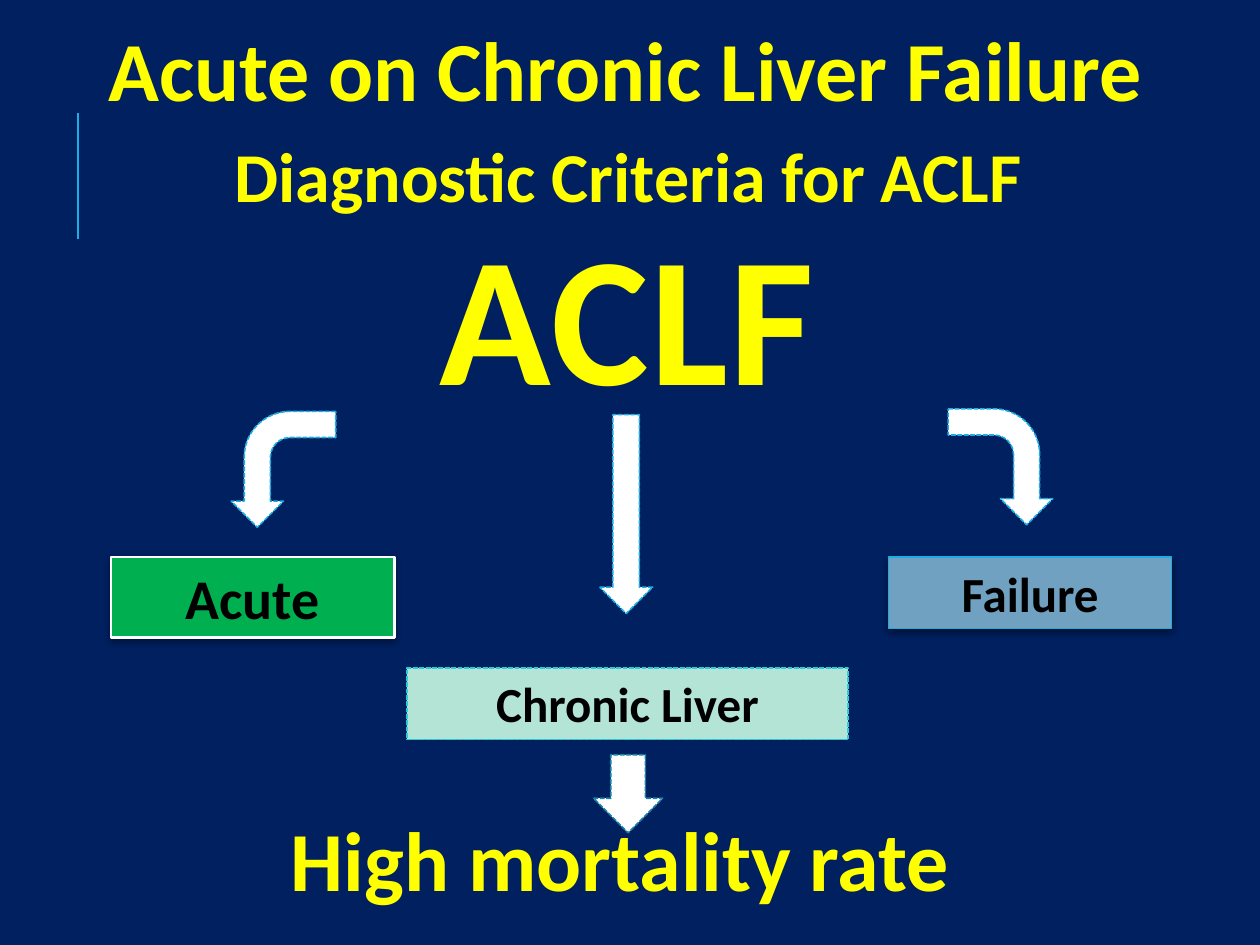
from dataclasses import dataclass
from typing import Optional

from lxml.etree import SubElement
from pptx import Presentation
from pptx.dml.color import RGBColor
from pptx.enum.dml import MSO_LINE
from pptx.enum.shapes import MSO_CONNECTOR, MSO_SHAPE
from pptx.enum.text import MSO_ANCHOR, MSO_AUTO_SIZE, PP_ALIGN
from pptx.oxml.ns import qn
from pptx.util import Inches, Pt

NAVY = RGBColor(0x00, 0x20, 0x60)
YELLOW = RGBColor(0xFF, 0xFF, 0x00)
WHITE = RGBColor(0xFF, 0xFF, 0xFF)
BLACK = RGBColor(0x00, 0x00, 0x00)
GREEN = RGBColor(0x00, 0xB0, 0x50)
STEEL = RGBColor(0x70, 0xA1, 0xC0)
MINT = RGBColor(0xB3, 0xE4, 0xD6)
SKY = RGBColor(0x1C, 0xAD, 0xE4)
TEAL = RGBColor(0x27, 0xCE, 0xD7)
DEEP_SKY = RGBColor(0x15, 0x80, 0xA9)

WIDTH, HEIGHT = Inches(10), Inches(7.5)
COLUMNS, ROWS = 100, 75


@dataclass(frozen=True)
class Area:
    column: float
    row: float
    columns: float
    rows: float

    def frame(self) -> dict:
        return {
            "left": int(WIDTH * self.column / COLUMNS),
            "top": int(HEIGHT * self.row / ROWS),
            "width": int(WIDTH * self.columns / COLUMNS),
            "height": int(HEIGHT * self.rows / ROWS),
        }


@dataclass(frozen=True)
class Heading:
    words: str
    area: Area
    size: float
    align: PP_ALIGN = PP_ALIGN.CENTER
    anchor: MSO_ANCHOR = MSO_ANCHOR.TOP


@dataclass(frozen=True)
class Component:
    words: str
    area: Area
    size: float
    fill: RGBColor
    edge: RGBColor
    edge_width: float
    dash: Optional[MSO_LINE] = None
    shadow_percent: int = 0


@dataclass(frozen=True)
class Arrow:
    preset: MSO_SHAPE
    area: Area
    edge: RGBColor = SKY
    rotation: float = 0
    flipped: bool = False


HEADINGS = [
    Heading("Acute on Chronic Liver Failure", Area(4.3, 2.5, 90.7, 5.8), 48,
            anchor=MSO_ANCHOR.MIDDLE),
    Heading("Diagnostic Criteria for ACLF", Area(6.7, 10, 86.3, 8), 40),
    Heading("High mortality rate", Area(22.1, 63.6, 70.9, 9), 48, PP_ALIGN.LEFT),
]
COMPONENTS = [
    Component("Acute", Area(8.8, 44.2, 22.5, 6.4), 32, GREEN, WHITE, 1.57,
              shadow_percent=35),
    Component("Failure", Area(70.5, 44.2, 22.5, 5.7), 28, STEEL, SKY, 0.75,
              shadow_percent=45),
    Component("Chronic Liver", Area(32.3, 53, 35, 5.7), 28, MINT, TEAL, 0.9,
              MSO_LINE.SQUARE_DOT),
]
ARROWS = [
    Arrow(MSO_SHAPE.BENT_ARROW, Area(17.9, 33.1, 9.2, 8.3), rotation=270, flipped=True),
    Arrow(MSO_SHAPE.BENT_ARROW, Area(74.8, 32.9, 9.2, 8.3), rotation=90),
    Arrow(MSO_SHAPE.DOWN_ARROW, Area(47.6, 32.9, 4.2, 15.8)),
    Arrow(MSO_SHAPE.DOWN_ARROW, Area(47.1, 59.9, 5.5, 6.2), DEEP_SKY),
]


def set_all(target, values: dict) -> None:
    for attribute, value in values.items():
        setattr(target, attribute, value)


def write(shape, words: str, size: float, color: RGBColor,
          align: PP_ALIGN = PP_ALIGN.CENTER, anchor: MSO_ANCHOR = MSO_ANCHOR.TOP):
    set_all(shape.text_frame, {"word_wrap": True, "auto_size": MSO_AUTO_SIZE.NONE,
                               "vertical_anchor": anchor})
    paragraph = shape.text_frame.paragraphs[0]
    paragraph.alignment = align
    run = paragraph.add_run()
    run.text = words
    set_all(run.font, {"name": "Calibri", "size": Pt(size), "bold": True})
    run.font.color.rgb = color
    return paragraph


def paint(shape, fill: RGBColor, edge: RGBColor, width: float,
          dash: Optional[MSO_LINE]) -> None:
    shape.shadow.inherit = False
    shape.fill.solid()
    shape.fill.fore_color.rgb = fill
    shape.line.color.rgb = edge
    set_all(shape.line, {"width": Pt(width), "dash_style": dash})


def cast_shadow(shape, percent: int) -> None:
    effects = shape.element.spPr.find(qn("a:effectLst"))
    shadow = SubElement(effects, qn("a:outerShdw"), blurRad=str(Pt(4)),
                        dist=str(Pt(2)), dir="5400000", rotWithShape="0")
    color = SubElement(shadow, qn("a:srgbClr"), val=str(BLACK))
    SubElement(color, qn("a:alpha"), val=str(percent * 1000))


def draw_heading(slide, heading: Heading) -> None:
    box = slide.shapes.add_textbox(**heading.area.frame())
    write(box, heading.words, heading.size, YELLOW, heading.align, heading.anchor)


def draw_component(slide, part: Component) -> None:
    box = slide.shapes.add_shape(MSO_SHAPE.RECTANGLE, **part.area.frame())
    paint(box, part.fill, part.edge, part.edge_width, part.dash)
    if part.shadow_percent:
        cast_shadow(box, part.shadow_percent)
    write(box, part.words, part.size, BLACK)


def draw_arrow(slide, arrow: Arrow) -> None:
    shape = slide.shapes.add_shape(arrow.preset, **arrow.area.frame())
    paint(shape, WHITE, arrow.edge, 0.9, MSO_LINE.SQUARE_DOT)
    shape.rotation = arrow.rotation
    if arrow.flipped:
        shape.element.spPr.find(qn("a:xfrm")).set("flipH", "1")


def draw_title(slide) -> None:
    title = slide.shapes.title
    set_all(title, Area(33.9, 18.3, 37.4, 16.1).frame())
    acronym = write(title, "ACLF", 105.3, YELLOW, PP_ALIGN.LEFT, MSO_ANCHOR.MIDDLE)
    acronym.line_spacing = 0.8
    acronym.runs[0].font._element.set("spc", "100")


def draw_accent(slide) -> None:
    x = int(WIDTH * 6.2 / COLUMNS)
    accent = slide.shapes.add_connector(MSO_CONNECTOR.STRAIGHT, x, int(HEIGHT * 19 / ROWS),
                                        x, int(HEIGHT * 9 / ROWS))
    accent.line.color.rgb = SKY
    accent.line.width = Pt(1.5)
    SubElement(accent.element.spPr, qn("a:effectLst"))


def main() -> None:
    deck = Presentation()
    set_all(deck, {"slide_width": WIDTH, "slide_height": HEIGHT})
    slide = deck.slides.add_slide(deck.slide_layouts.get_by_name("Title Only"))
    slide.background.fill.solid()
    slide.background.fill.fore_color.rgb = NAVY
    draw_accent(slide)
    draw_title(slide)
    for part in COMPONENTS:
        draw_component(slide, part)
    for arrow in ARROWS:
        draw_arrow(slide, arrow)
    for heading in HEADINGS:
        draw_heading(slide, heading)
    deck.save("out.pptx")


if __name__ == "__main__":
    main()
